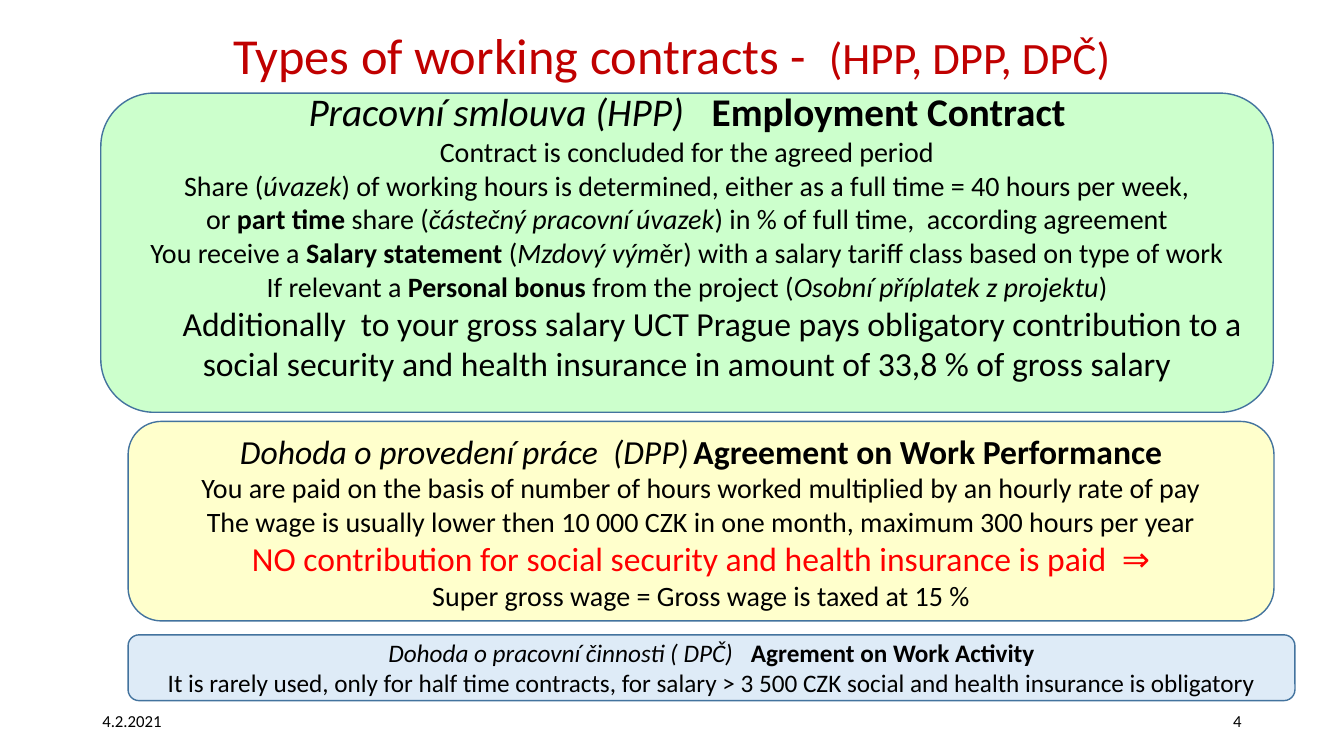
import dataclasses

import pptx
import pptx.dml.color
import pptx.enum.shapes
import pptx.enum.text
import pptx.util
from lxml import etree
from pptx.oxml.ns import qn

Pt = pptx.util.Pt
ALIGN = pptx.enum.text.PP_ALIGN
MIDDLE = pptx.enum.text.MSO_ANCHOR.MIDDLE


@dataclasses.dataclass(frozen=True)
class Theme:
    font: str = "Calibri"
    title_color: str = "C00000"
    text_color: str = "000000"
    warning_color: str = "FF0000"
    outline: str = "43739E"
    employment_fill: str = "CCFFCC"
    performance_fill: str = "FFFFCC"
    activity_fill: str = "DEEBF7"
    title: int = 36
    title_detail: int = 32
    main_heading: int = 28
    heading: int = 24
    body: int = 20
    small: int = 18
    footer: int = 12


THEME = Theme()
BOLD = {"bold": True}
ITALIC = {"italic": True}


def rgb(color):
    return pptx.dml.color.RGBColor.from_string(color)


def write_text(para, text, *, size, color=THEME.text_color, bold=False, italic=False):
    for index, line in enumerate(text.split("\n")):
        if index:
            para.add_line_break()
        span = para.add_run()
        span.text = line
        span.font.name = THEME.font
        span.font.size = Pt(size)
        span.font.color.rgb = rgb(color)
        span.font.bold = bold
        span.font.italic = italic


def add_tab_stop(para, position):
    stops = etree.SubElement(para._p.get_or_add_pPr(), qn("a:tabLst"))
    etree.SubElement(stops, qn("a:tab"), pos=str(Pt(position)), algn="l")


def write_paragraphs(frame, paragraphs, align=ALIGN.CENTER):
    frame.word_wrap = True
    frame.vertical_anchor = MIDDLE
    for index, (size, spans, *tab_stop) in enumerate(paragraphs):
        para = frame.add_paragraph() if index else frame.paragraphs[0]
        para.alignment = align
        for position in tab_stop:
            add_tab_stop(para, position)
        for text, style in spans:
            write_text(para, text, **{"size": size, **style})


def add_title(page, spans):
    title = page.shapes.title
    title.left, title.top, title.width, title.height = Pt(66), Pt(16.5), Pt(828), Pt(50)
    title.text_frame.auto_size = pptx.enum.text.MSO_AUTO_SIZE.NONE
    write_paragraphs(title.text_frame, [(THEME.title, spans)])
    title.text_frame.paragraphs[0].line_spacing = 0.9


def add_footer(page, text, left, align):
    box = page.shapes.add_textbox(Pt(left), Pt(500.5), Pt(216), Pt(28.75))
    write_paragraphs(box.text_frame, [(THEME.footer, [(text, {})])], align)


def add_contract(page, left, top, width, height, fill, paragraphs, bottom_inset=3.6):
    box = page.shapes.add_shape(
        pptx.enum.shapes.MSO_SHAPE.ROUNDED_RECTANGLE, Pt(left), Pt(top), Pt(width), Pt(height)
    )
    box.shadow.inherit = False
    box.fill.solid()
    box.fill.fore_color.rgb = rgb(fill)
    box.line.color.rgb = rgb(THEME.outline)
    box.line.width = Pt(1)
    box.text_frame.margin_bottom = Pt(bottom_inset)
    write_paragraphs(box.text_frame, paragraphs)


def main():
    deck = pptx.Presentation()
    deck.slide_width, deck.slide_height = Pt(960), Pt(540)
    page = deck.slides.add_slide(deck.slide_layouts.get_by_name("Title Only"))

    add_title(page, [
        ("Types of working contracts -  ", {"color": THEME.title_color}),
        ("(HPP, DPP, DPČ)", {"color": THEME.title_color, "size": THEME.title_detail}),
    ])
    add_footer(page, "4.2.2021", 66, ALIGN.LEFT)
    add_footer(page, "4", 678, ALIGN.RIGHT)

    add_contract(page, 91.5, 301, 818.5, 142.5, THEME.performance_fill, [
        (THEME.heading, [
            ("Dohoda o provedení práce  (DPP)\t", ITALIC),
            ("Agreement on Work Performance", BOLD),
        ]),
        (THEME.body, [("You are paid on the basis of number of hours worked multiplied by an hourly rate of pay", {})]),
        (THEME.body, [("The wage is usually lower then 10 000 CZK in one month, maximum 300 hours per year", {})]),
        (THEME.heading, [
            ("NO contribution for social security and health insurance is paid  ⇒", {"color": THEME.warning_color}),
        ]),
        (THEME.body, [("Super gross wage = Gross wage is taxed at 15 %", {})]),
    ])
    add_contract(page, 72, 66.5, 837.5, 228, THEME.employment_fill, [
        (THEME.main_heading, [("Pracovní smlouva (HPP)\t", ITALIC), ("Employment Contract", BOLD)]),
        (THEME.body, [("Contract is concluded for the agreed period", {})]),
        (THEME.body, [
            ("Share (", {}),
            ("úvazek", ITALIC),
            (") of working hours is determined, either as a full time = 40 hours per week,\nor ", {}),
            ("part time ", BOLD),
            ("share (", {}),
            ("částečný pracovní úvazek", ITALIC),
            (") in % of full time,  according agreement", {}),
        ]),
        (THEME.body, [
            ("You receive a ", {}),
            ("Salary statement ", BOLD),
            ("(", {}),
            ("Mzdový vým", ITALIC),
            ("ěr) with a salary tariff class based on type of work", {}),
        ]),
        (THEME.body, [
            ("If relevant a ", {}),
            ("Personal bonus ", BOLD),
            ("from the project (", {}),
            ("Osobní příplatek z projektu", ITALIC),
            (")", {}),
        ]),
        (THEME.heading, [
            ("\tAdditionally  to your gross salary UCT Prague pays obligatory contribution "
             "to a social security and health insurance in amount of 33,8 % of gross salary", {}),
        ]),
    ], bottom_inset=28)
    add_contract(page, 91.5, 453.5, 833.5, 47, THEME.activity_fill, [
        (THEME.small, [
            ("Dohoda o pracovní činnosti ( DPČ)\t", ITALIC),
            ("Agrement on Work Activity", BOLD),
        ], 259),
        (THEME.small, [
            ("It is rarely used, only for half time contracts, "
             "for salary > 3 500 CZK social and health insurance is obligatory", {}),
        ]),
    ])

    deck.save("out.pptx")


if __name__ == "__main__":
    main()
